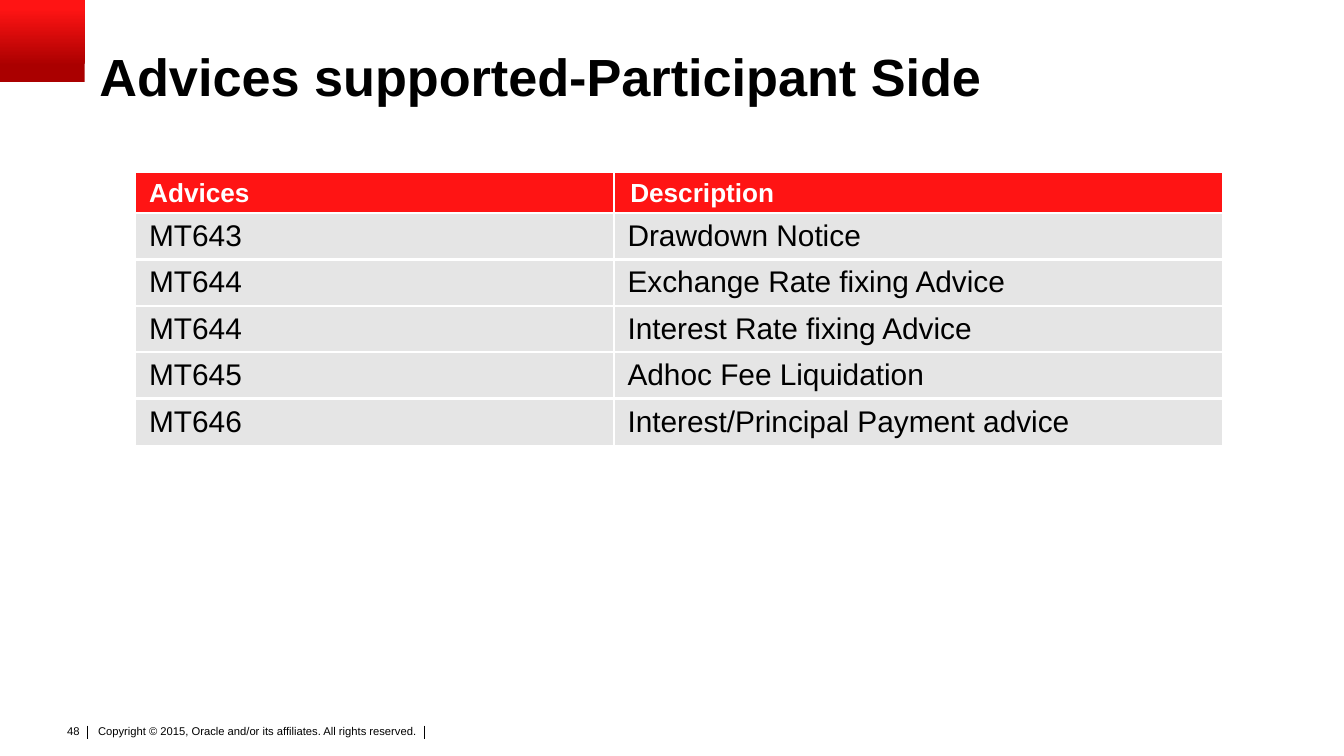
from dataclasses import dataclass

from lxml import etree
from pptx import Presentation
from pptx.dml.color import RGBColor
from pptx.enum import shapes, text
from pptx.oxml import ns
from pptx.util import Inches, Pt


@dataclass(frozen=True)
class Theme:
    font: str = "Arial"
    black: str = "000000"
    white: str = "FFFFFF"
    red: str = "FF1414"
    dark: str = "AA0000"
    gray: str = "E5E5E5"
    title: int = 28
    head: int = 14
    body: int = 16
    foot: int = 6
    rule: float = 0.5
    edge: float = 1.5


THEME = Theme()
ROWS = [
    ("Advices", "Description"),
    ("MT643", "Drawdown Notice"),
    ("MT644", "Exchange Rate fixing Advice"),
    ("MT644", "Interest Rate fixing Advice"),
    ("MT645", "Adhoc Fee Liquidation"),
    ("MT646", "Interest/Principal Payment advice"),
]


def put(obj, vals):
    for key, val in vals.items():
        setattr(obj, key, val)


def pads(side, top):
    return {
        "margin_left": Inches(side), "margin_right": Inches(side),
        "margin_top": Inches(top), "margin_bottom": Inches(top),
    }


def write(frame, words, size, color=THEME.black, bold=False, **form):
    para = frame.paragraphs[0]
    put(para, form)
    run = para.add_run()
    run.text = words
    put(run.font, {"name": THEME.font, "size": Pt(size), "bold": bold})
    run.font.color.rgb = RGBColor.from_string(color)


def add_text(slide, box, words, size, pad, **look):
    frame = slide.shapes.add_textbox(*map(Inches, box)).text_frame
    put(frame, {"word_wrap": True, **pads(*pad)})
    write(frame, words, size, **look)


def add_rule(slide, x):
    """Draw a short upright divider in the footer."""
    ends = map(Inches, (x, 5.4, x, 5.5))
    line = slide.shapes.add_connector(shapes.MSO_CONNECTOR.STRAIGHT, *ends)
    line.line.width = Pt(THEME.rule)
    line.line.color.rgb = RGBColor.from_string(THEME.black)
    etree.SubElement(line._element.spPr, ns.qn("a:effectLst"))


def add_block(slide):
    """Draw the corner block, dark at its foot and bright at its top."""
    block = slide.shapes.add_shape(
        shapes.MSO_SHAPE.RECTANGLE, 0, 0, Inches(0.63), Inches(0.61))
    block.shadow.inherit = False
    block.line.fill.background()
    block.fill.gradient()
    block.fill.gradient_angle = 90
    stops = [(0.2, THEME.dark), (0.9, THEME.red)]
    for stop, (place, color) in zip(block.fill.gradient_stops, stops):
        stop.position = place
        stop.color.rgb = RGBColor.from_string(color)


def edge(cell, sides):
    """Show white borders on the named sides only; call before filling."""
    props = cell._tc.get_or_add_tcPr()
    for side, shown in sides.items():
        line = etree.SubElement(
            props, ns.qn(f"a:ln{side}"), w=str(Pt(THEME.edge)))
        if shown:
            fill = etree.SubElement(line, ns.qn("a:solidFill"))
            etree.SubElement(fill, ns.qn("a:srgbClr"), val=THEME.white)
        else:
            etree.SubElement(line, ns.qn("a:noFill"))


def add_grid(slide, rows):
    wides, last = (3.56, 4.52), len(rows) - 1
    highs = [0.29] + [1.73 / last] * last
    box = map(Inches, (1.01, 1.29, sum(wides), sum(highs)))
    grid = slide.shapes.add_table(len(rows), len(wides), *box).table
    for col, wide in zip(grid.columns, wides):
        col.width = Inches(wide)
    head = {"size": THEME.head, "color": THEME.white, "bold": True}
    body = {"size": THEME.body}
    for i, (row, high) in enumerate(zip(rows, highs)):
        grid.rows[i].height = Inches(high)
        for j, words in enumerate(row):
            cell = grid.cell(i, j)
            put(cell, {"vertical_anchor": text.MSO_ANCHOR.MIDDLE,
                       **pads(0.1, 0.03)})
            edge(cell, {"L": j > 0, "R": j < len(row) - 1,
                        "T": i > 0, "B": i < last})
            cell.fill.solid()
            cell.fill.fore_color.rgb = RGBColor.from_string(
                THEME.gray if i else THEME.red)
            write(cell.text_frame, words, **(body if i else head))
    grid.cell(0, 1).margin_left = Inches(0.12)


def add_foot(slide):
    add_text(
        slide, (0.69, 5.37, 2.74, 0.24),
        "Copyright © 2015, Oracle and/or its affiliates. All rights reserved.",
        THEME.foot, (0.04, 0.02))
    for x in (0.65, 3.16):
        add_rule(slide, x)
    add_text(slide, (0.39, 5.34, 0.3, 0.2), "48", THEME.foot, (0.1, 0.05),
             alignment=text.PP_ALIGN.RIGHT)


def main():
    deck = Presentation()
    wide = Inches(10)
    put(deck, {"slide_width": wide, "slide_height": wide * 9 // 16})
    slide = deck.slides.add_slide(deck.slide_layouts[6])
    add_foot(slide)
    add_block(slide)
    add_text(slide, (0.74, 0.38, 9, 0.44),
             "Advices supported-Participant Side", THEME.title, (0, 0),
             bold=True, line_spacing=0.9)
    add_grid(slide, ROWS)
    deck.save("out.pptx")


if __name__ == "__main__":
    main()
